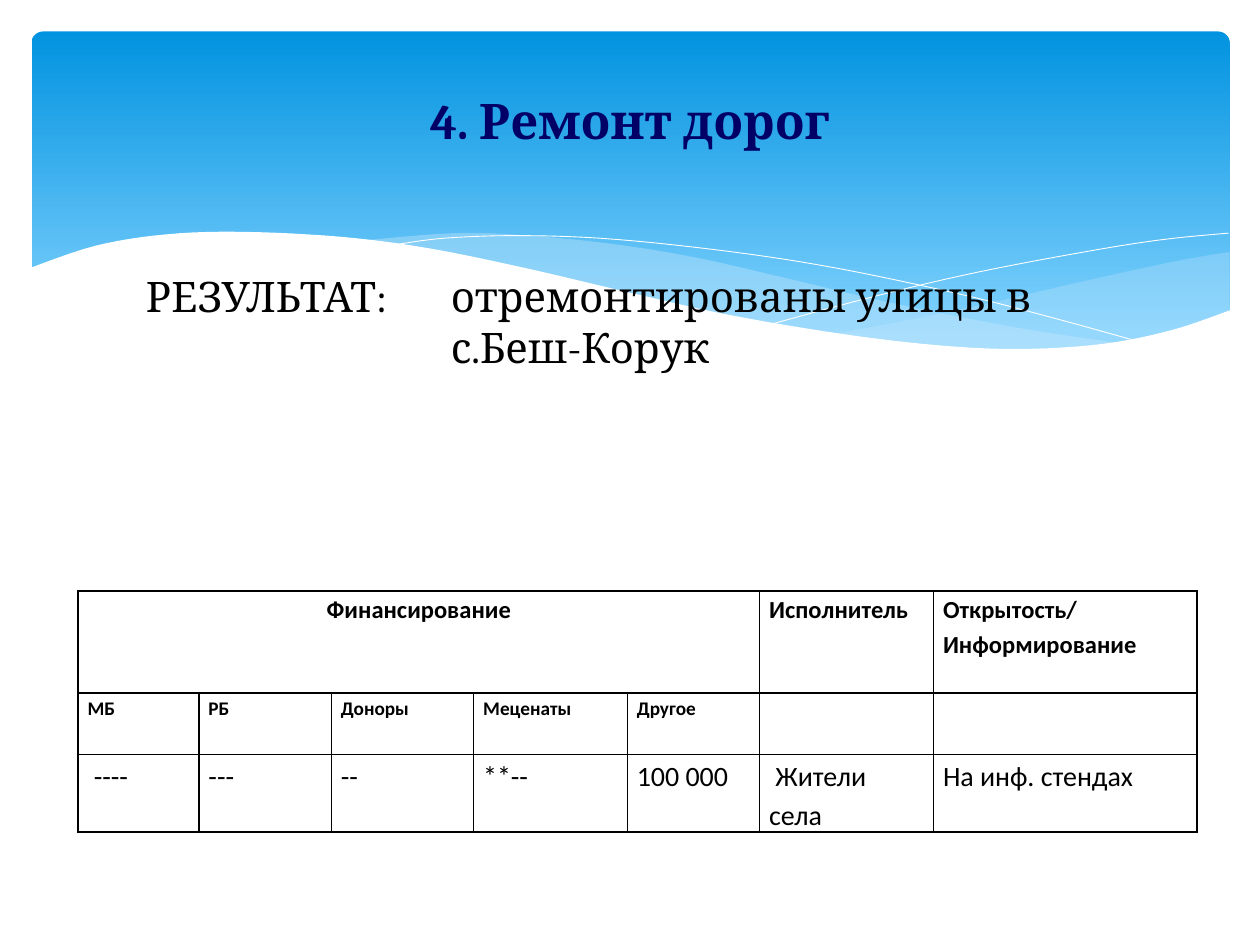
from dataclasses import dataclass
from itertools import chain
from typing import Optional

from lxml.etree import SubElement
from pptx import Presentation
from pptx.dml.color import RGBColor
from pptx.enum.shapes import MSO_SHAPE
from pptx.enum.text import MSO_ANCHOR, PP_ALIGN
from pptx.oxml.ns import qn
from pptx.util import Cm, Pt

Point = tuple[float, float]
CM_PER_INCH = 2.54
CURVE_STEPS = 6
BLACK = "000000"
WHITE = "FFFFFF"
PALE_BLUE = "C6E7FC"


@dataclass
class Wave:
    curves: list[list[Point]]
    fill: Optional[str] = None
    opacity: int = 100


@dataclass
class TableRow:
    height: float
    size: int
    bold: bool
    texts: list[str]


WAVES = [
    Wave([[(9.76, 2), (9.35, 2.07), (8.61, 2.23), (7.79, 2.42), (7.06, 2.57), (6.61, 2.65)],
          [(6.61, 2.65), (7.05, 2.71), (7.57, 2.76), (8.14, 2.78), (8.72, 2.74),
           (9.21, 2.65), (9.76, 2.47)]], PALE_BLUE, 29),
    Wave([[(8.93, 2.73), (8.07, 2.6), (7.06, 2.4), (6.29, 2.22), (5.55, 2.05),
           (4.89, 1.94), (4.2, 1.87), (3.61, 1.85), (2.86, 1.91)],
          [(2.86, 1.91), (3.62, 2.03), (4.49, 2.22), (5.3, 2.4), (6.01, 2.55),
           (6.8, 2.68), (7.48, 2.76), (8.18, 2.78), (8.93, 2.73)]], PALE_BLUE, 40),
    Wave([[(3.09, 1.95), (3.53, 1.89), (4.16, 1.87), (4.89, 1.9), (5.82, 2),
           (6.65, 2.13), (7.6, 2.33), (8.31, 2.51), (9.07, 2.72)]]),
    Wave([[(6.13, 2.57), (6.95, 2.35), (7.76, 2.16), (8.66, 1.99), (9.24, 1.9), (9.75, 1.85)]]),
    Wave([[(9.77, 2.46), (9.3, 2.62), (8.75, 2.73), (8.09, 2.77), (7.44, 2.74),
           (6.68, 2.65), (5.79, 2.5), (5.03, 2.33), (4.18, 2.13), (3.4, 1.97),
           (2.71, 1.88), (1.93, 1.84), (1.32, 1.86), (0.76, 1.95), (0.23, 2.13)],
          [(0.23, 3.29), (9.77, 3.29)]], WHITE),
]
COLUMN_WIDTHS = [0.96, 1.05, 1.13, 1.22, 1.05, 1.38, 2.09]
FUNDING_COLUMNS = 5
TABLE_ROWS = [
    TableRow(0.81, 14, True, ["Финансирование", "", "", "", "",
                              "Исполнитель", "Открытость/Информирование"]),
    TableRow(0.49, 11, True, ["МБ", "РБ", "Доноры", "Меценаты", "Другое", "", ""]),
    TableRow(0.61, 16, False, ["\u00a0----", "---", "--", "**--", "100 000",
                               " Жители села", "На инф. стендах"]),
]


def length(inches: float) -> Cm:
    return Cm(inches * CM_PER_INCH)


def color(value: str) -> RGBColor:
    return RGBColor.from_string(value)


def write_text(frame, text: str, *, font: str, size: float, value: str = BLACK,
               bold: bool = False, align=PP_ALIGN.LEFT, spacing: float = 1):
    paragraph = frame.paragraphs[0]
    paragraph.alignment = align
    paragraph.line_spacing = spacing
    run = paragraph.add_run()
    run.text = text
    run.font.name = font
    run.font.size = Pt(size)
    run.font.bold = bold
    run.font.color.rgb = color(value)
    return paragraph


def smooth_curve(points: list[Point]) -> list[Point]:
    padded = [points[0], *points, points[-1]]
    result = [points[0]]
    for before, start, end, after in zip(padded, padded[1:], padded[2:], padded[3:]):
        for step in range(1, CURVE_STEPS + 1):
            t = step / CURVE_STEPS
            result.append(tuple(
                (2 * b + (c - a) * t + (2 * a - 5 * b + 4 * c - d) * t ** 2
                 + (3 * b - a - 3 * c + d) * t ** 3) / 2
                for a, b, c, d in zip(before, start, end, after)))
    return result


def draw_wave(slide, wave: Wave) -> None:
    curve = chain.from_iterable(smooth_curve(points) for points in wave.curves)
    start, *rest = [(length(x), length(y)) for x, y in curve]
    builder = slide.shapes.build_freeform(*start)
    builder.add_line_segments(rest, close=wave.fill is not None)
    shape = builder.convert_to_shape()
    shape.shadow.inherit = False
    if wave.fill is None:
        shape.fill.background()
        shape.line.color.rgb = color(WHITE)
        shape.line.width = Pt(0.5)
        return
    shape.line.fill.background()
    shape.fill.solid()
    shape.fill.fore_color.rgb = color(wave.fill)
    if wave.opacity < 100:
        fill_color = shape._element.spPr.find(qn("a:solidFill"))[0]
        SubElement(fill_color, qn("a:alpha"), val=str(wave.opacity * 1000))


def draw_banner(slide) -> None:
    shape = slide.shapes.add_shape(MSO_SHAPE.ROUNDED_RECTANGLE, length(0.25), length(0.25),
                                   length(9.51), length(2.7))
    shape.adjustments[0] = 0.034
    shape.shadow.inherit = False
    shape.line.fill.background()
    shape.fill.gradient()
    shape.fill.gradient_angle = 270
    stops = [(0, "0293E0"), (0.9, "83D3FE")]
    for stop, (position, value) in zip(shape.fill.gradient_stops, stops):
        stop.position = position
        stop.color.rgb = color(value)


def add_text_frame(slide, left: float, top: float, width: float, height: float):
    frame = slide.shapes.add_textbox(length(left), length(top),
                                     length(width), length(height)).text_frame
    frame.word_wrap = True
    return frame


def draw_title(slide) -> None:
    frame = add_text_frame(slide, 0.5, 0.37, 9, 1.63)
    frame.vertical_anchor = MSO_ANCHOR.MIDDLE
    frame.margin_bottom = length(0.52)
    write_text(frame, "4. Ремонт дорог", font="Cambria", size=28, value="000066",
               bold=True, align=PP_ALIGN.CENTER)


def draw_result(slide) -> None:
    frame = add_text_frame(slide, 1.06, 2.1, 8.1, 1.47)
    paragraph = write_text(frame, "РЕЗУЛЬТАТ:\tотремонтированы улицы в с.Беш-Корук",
                           font="Cambria", size=24)
    properties = paragraph._p.get_or_add_pPr()
    hanging = length(2.42)
    properties.set("marL", str(hanging))
    properties.set("indent", str(-hanging))


def format_cell(cell) -> None:
    cell.margin_left = cell.margin_right = Cm(0.19)
    cell.margin_top = cell.margin_bottom = 0
    properties = cell._tc.get_or_add_tcPr()
    for side in ("lnL", "lnR", "lnT", "lnB"):
        border = SubElement(properties, qn(f"a:{side}"), w=str(Pt(1)))
        fill = SubElement(border, qn("a:solidFill"))
        SubElement(fill, qn("a:srgbClr"), val=BLACK)
    cell.fill.background()


def draw_table(slide) -> None:
    table = slide.shapes.add_table(
        len(TABLE_ROWS), len(COLUMN_WIDTHS), length(0.62), length(4.69),
        length(sum(COLUMN_WIDTHS)), length(sum(row.height for row in TABLE_ROWS))).table
    table.first_row = table.horz_banding = False
    for column, width in zip(table.columns, COLUMN_WIDTHS):
        column.width = length(width)
    table.cell(0, 0).merge(table.cell(0, FUNDING_COLUMNS - 1))
    for row_index, row in enumerate(TABLE_ROWS):
        table.rows[row_index].height = length(row.height)
        for column_index, text in enumerate(row.texts):
            cell = table.cell(row_index, column_index)
            format_cell(cell)
            if text:
                align = PP_ALIGN.CENTER if cell.is_merge_origin else PP_ALIGN.LEFT
                write_text(cell.text_frame, text, font="Calibri", size=row.size,
                           bold=row.bold, align=align, spacing=1.15)


def main() -> None:
    presentation = Presentation()
    presentation.slide_width = length(10)
    presentation.slide_height = length(7.5)
    slide = presentation.slides.add_slide(presentation.slide_layouts[6])
    draw_banner(slide)
    for wave in WAVES:
        draw_wave(slide, wave)
    draw_title(slide)
    draw_result(slide)
    draw_table(slide)
    presentation.save("out.pptx")


if __name__ == "__main__":
    main()
